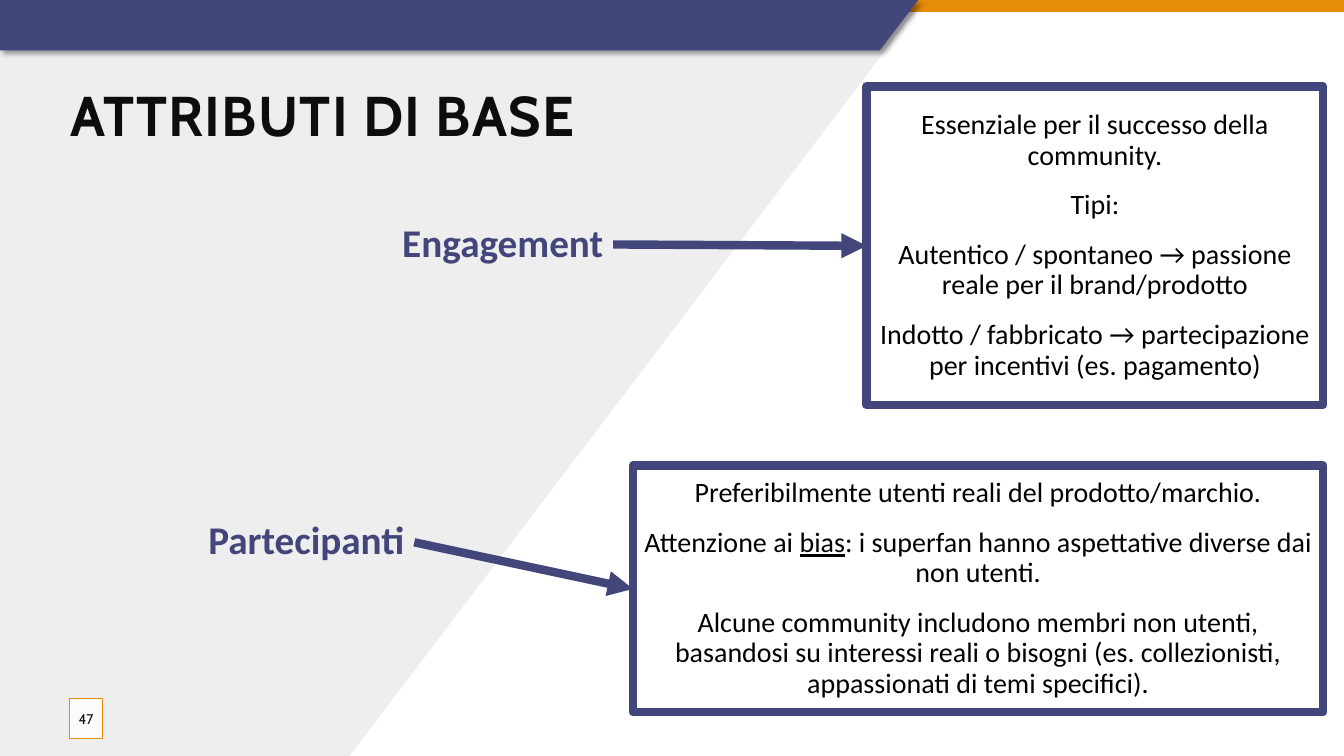
from lxml import etree
from pptx import Presentation
from pptx.dml.color import RGBColor
from pptx.enum.shapes import MSO_CONNECTOR, MSO_SHAPE
from pptx.enum.text import MSO_ANCHOR, PP_ALIGN
from pptx.oxml.ns import qn
from pptx.util import Cm, Pt

RECT = MSO_SHAPE.RECTANGLE
STRAIGHT = MSO_CONNECTOR.STRAIGHT
MIDDLE = MSO_ANCHOR.MIDDLE
LEFT, CENTER, RIGHT = PP_ALIGN.LEFT, PP_ALIGN.CENTER, PP_ALIGN.RIGHT
VIOLET, ORANGE, GREY = "43467B", "E58C09", "EEEEEE"
WHITE, BLACK, INK = "FFFFFF", "000000", "0D0D0D"


def rgb(color):
    return RGBColor.from_string(color)


def write(sp, paragraphs, font, size, color, align, bold=False, spaced=False):
    tf = sp.text_frame
    tf.word_wrap = True
    tf.vertical_anchor = MIDDLE
    for i, runs in enumerate(paragraphs):
        p = tf.add_paragraph() if i else tf.paragraphs[0]
        p.alignment = align
        if spaced:
            p.line_spacing = 0.9
            p.space_before = Pt(12 if i else 0)
            p.space_after = Pt(2)
        for text, underline in runs:
            r = p.add_run()
            r.text = text
            r.font.name = font
            r.font.size = Pt(size)
            r.font.bold = bold
            r.font.underline = underline
            r.font.color.rgb = rgb(color)


prs = Presentation()
prs.slide_width, prs.slide_height = Cm(33.87), Cm(19.05)
s = prs.slides.add_slide(prs.slide_layouts[6])

panel = [(0, 0), (23.14, 0), (23.14, 0.18), (8.81, 19.05), (0, 19.05)]
header = [(0, 0), (23.14, 0), (22.17, 1.27), (0, 1.27)]
stripe = s.shapes.add_shape(RECT, 0, 0, prs.slide_width, Cm(0.3))
stripe.shadow.inherit = False
stripe.fill.solid()
stripe.fill.fore_color.rgb = rgb(ORANGE)
stripe.line.fill.background()

for points, color in [(panel, GREY), (header, VIOLET)]:
    corners = [(Cm(x), Cm(y)) for x, y in points]
    builder = s.shapes.build_freeform(*corners[0])
    builder.add_line_segments(corners[1:], close=True)
    sp = builder.convert_to_shape()
    sp.shadow.inherit = False
    sp.fill.solid()
    sp.fill.fore_color.rgb = rgb(color)
    sp.line.fill.background()

effects = sp._element.spPr.find(qn("a:effectLst"))
shadow = etree.SubElement(effects, qn("a:outerShdw"), blurRad=str(Pt(4)),
                          dist=str(Pt(3)), dir="2700000", rotWithShape="0")
shade = etree.SubElement(shadow, qn("a:srgbClr"), val=BLACK)
etree.SubElement(shade, qn("a:alpha"), val="40000")
s.shapes._spTree.remove(stripe._element)
s.shapes._spTree.insert(3, stripe._element)

title = s.shapes.add_textbox(Cm(1.52), Cm(1.85), Cm(30.02), Cm(2.06))
write(title, [[("ATTRIBUTI DI BASE", False)]], "Cabin", 40, INK, LEFT, bold=True)
title.text_frame.paragraphs[0].runs[0].font._element.set("spc", "100")

topics = [
    ("Engagement", (1.73, 3.91, 13.72, 4.5), (21.84, 2.18, 11.51, 8.03), [
        [("Essenziale per il successo della community.", False)],
        [("Tipi:", False)],
        [("Autentico / spontaneo → passione reale per il brand/prodotto", False)],
        [("Indotto / fabbricato → partecipazione per incentivi (es. pagamento)", False)],
    ]),
    ("Partecipanti", (-0.74, 13.08, 11.18, 1.17), (15.95, 11.73, 17.4, 6.22), [
        [("Preferibilmente utenti reali del prodotto/marchio.", False)],
        [("Attenzione ai ", False), ("bias", True),
         (": i superfan hanno aspettative diverse dai non utenti.", False)],
        [("Alcune community includono membri non utenti, basandosi su interessi reali "
          "o bisogni (es. collezionisti, appassionati di temi specifici).", False)],
    ]),
]
for name, label_at, box_at, paragraphs in topics:
    box = s.shapes.add_shape(RECT, *[Cm(v) for v in box_at])
    box.shadow.inherit = False
    box.fill.solid()
    box.fill.fore_color.rgb = rgb(WHITE)
    box.line.color.rgb = rgb(VIOLET)
    box.line.width = Pt(6)
    write(box, paragraphs, "Calibri", 20, BLACK, CENTER, spaced=True)

    label = s.shapes.add_textbox(*[Cm(v) for v in label_at])
    write(label, [[(name, False)]], "Calibri", 28, VIOLET, RIGHT, bold=True, spaced=True)

    arrow = s.shapes.add_connector(STRAIGHT, 0, 0, 0, 0)
    arrow.begin_connect(label, 3)
    arrow.end_connect(box, 1)
    arrow.line.color.rgb = rgb(VIOLET)
    arrow.line.width = Pt(6)
    etree.SubElement(arrow.line._get_or_add_ln(), qn("a:tailEnd"), type="triangle")
    etree.SubElement(arrow._element.spPr, qn("a:effectLst"))

number = s.shapes.add_shape(RECT, Cm(1.75), Cm(17.6), Cm(0.84), Cm(1.02))
number.shadow.inherit = False
number.fill.solid()
number.fill.fore_color.rgb = rgb(WHITE)
tint = number._element.spPr.find(qn("a:solidFill")).find(qn("a:srgbClr"))
etree.SubElement(tint, qn("a:alpha"), val="82000")
number.line.color.rgb = rgb(ORANGE)
number.line.width = Pt(0.75)
number.text_frame.margin_left = number.text_frame.margin_right = 0
write(number, [[("47", False)]], "Cabin", 10, INK, CENTER)

prs.save("out.pptx")
